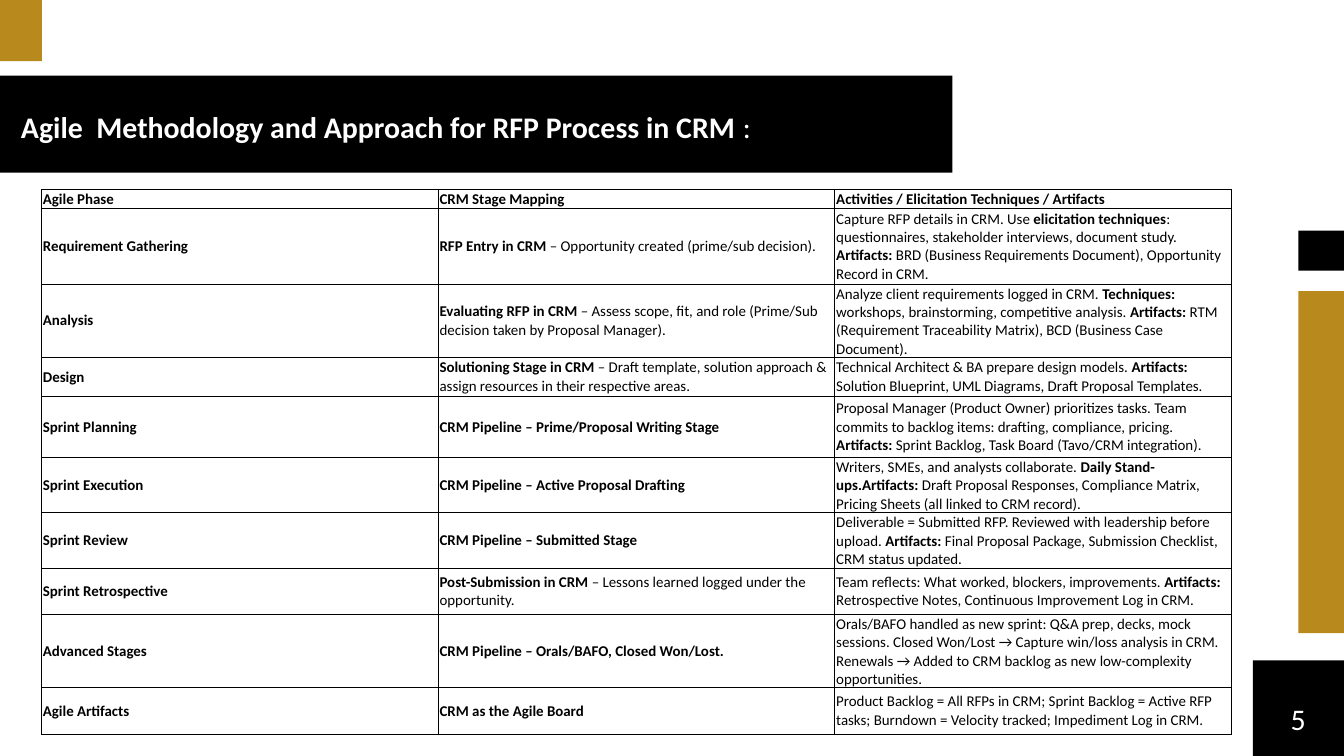
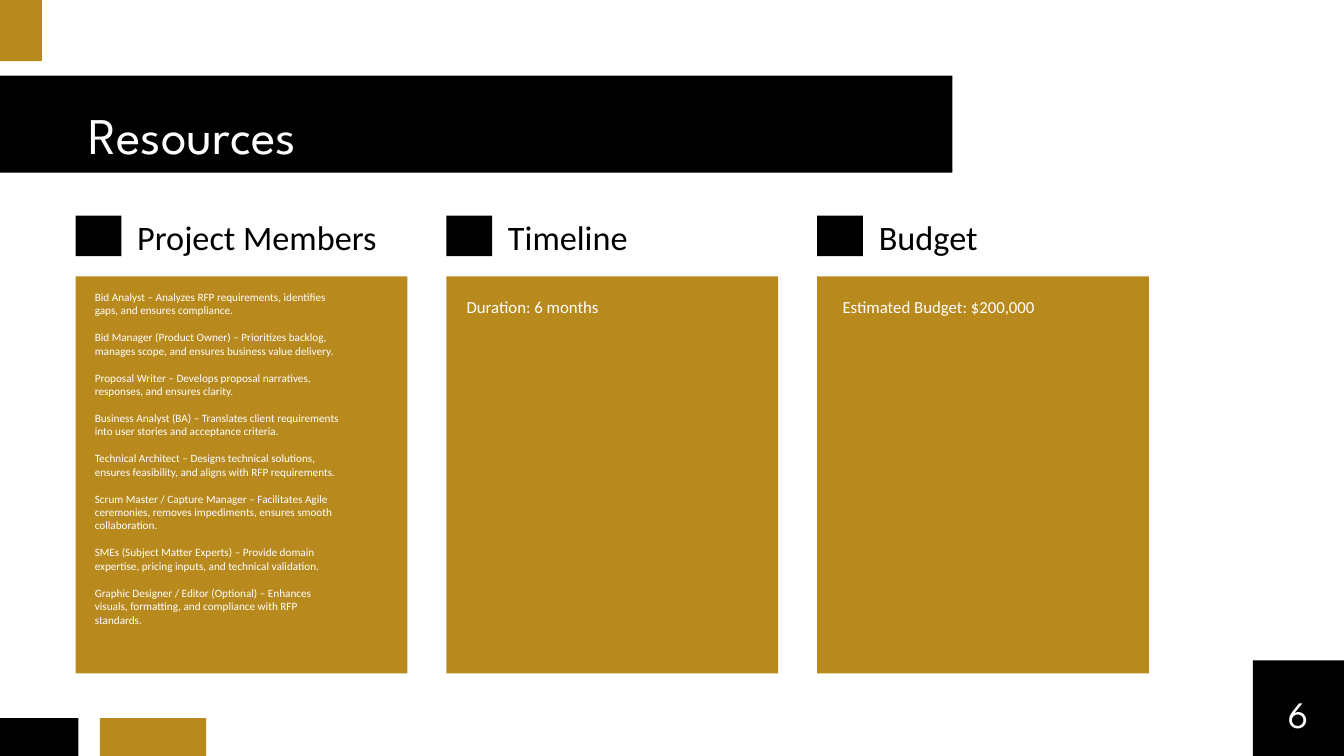
from lxml import etree
from pptx import Presentation
from pptx.dml.color import RGBColor
from pptx.enum.shapes import MSO_SHAPE
from pptx.enum.text import MSO_ANCHOR, PP_ALIGN
from pptx.oxml import parse_xml
from pptx.oxml.ns import nsdecls
from pptx.util import Pt

BLACK = RGBColor(0x00, 0x00, 0x00)
GOLD = RGBColor(0xB8, 0x8A, 0x1E)
WHITE = RGBColor(0xFF, 0xFF, 0xFF)
BODY_FONT = "Calibri"
DISPLAY_FONT = "League Spartan"


def add_block(slide, left, top, width, height, color):
    shape = slide.shapes.add_shape(
        MSO_SHAPE.RECTANGLE, Pt(left), Pt(top), Pt(width), Pt(height))
    shape.shadow.inherit = False
    shape.fill.solid()
    shape.fill.fore_color.rgb = color
    shape.line.fill.background()


def write_text(container, text, box=None, size=16, color=BLACK, font=BODY_FONT,
               align=None, line_spacing=None, space_after=None, inset=(0, 0)):
    """Write into a table cell, or into a new text box when a slide and box are given.

    Each line becomes a paragraph; parts between ** marks are bold.
    """
    if box:
        frame = container.shapes.add_textbox(*map(Pt, box)).text_frame
        frame.word_wrap = True
        frame.margin_left = frame.margin_right = Pt(inset[0])
        frame.margin_top = frame.margin_bottom = Pt(inset[1])
    else:
        frame = container.text_frame
    for index, line in enumerate(text.split("\n")):
        paragraph = frame.add_paragraph() if index else frame.paragraphs[0]
        paragraph.alignment = align
        if line_spacing:
            paragraph.line_spacing = Pt(line_spacing)
        if space_after:
            paragraph.space_after = Pt(space_after)
        for position, part in enumerate(line.split("**")):
            if part:
                run = paragraph.add_run()
                run.text = part
                run.font.size = Pt(size)
                run.font.name = font
                run.font.bold = position % 2 == 1
                run.font.color.rgb = color


presentation = Presentation()
presentation.slide_width = Pt(1440)
presentation.slide_height = Pt(810)

# Shared frame: corner accent, title band, page number
PAGES = [
    dict(title=dict(text="**Agile  Methodology and Approach for RFP Process in CRM **:",
                    box=(22.5, 101.5, 1069, 49), size=32, line_spacing=53.2),
         number=dict(text="5", size=32)),
    dict(title=dict(text="Resources", box=(94.5, 100, 433.5, 73), size=55,
                    font=DISPLAY_FONT, line_spacing=77),
         number=dict(text="6", size=40, font=DISPLAY_FONT)),
]
slides = []
for page in PAGES:
    slide = presentation.slides.add_slide(presentation.slide_layouts[6])
    add_block(slide, 0, 0, 45, 65.5, GOLD)
    add_block(slide, 0, 81, 1020.5, 104, BLACK)
    add_block(slide, 1342.5, 707.5, 97.5, 102.5, BLACK)
    write_text(slide, color=WHITE, **page["title"])
    write_text(slide, box=(1349.5, 733, 83, 52), color=WHITE,
               align=PP_ALIGN.CENTER, line_spacing=56, **page["number"])
    slides.append(slide)
agile_slide, resources_slide = slides

# Agile phases table
add_block(agile_slide, 1391, 247, 49, 43, BLACK)
add_block(agile_slide, 1391, 312, 49, 366.5, GOLD)

PHASES = [
    (20, "**Agile Phase**", "**CRM Stage Mapping**",
     "**Activities / Elicitation Techniques / Artifacts**"),
    (81, "**Requirement Gathering**",
     "**RFP Entry in CRM** – Opportunity created (prime/sub decision).",
     "Capture RFP details in CRM. Use **elicitation techniques**: questionnaires, "
     "stakeholder interviews, document study. **Artifacts:** BRD (Business "
     "Requirements Document), Opportunity Record in CRM."),
    (73, "**Analysis**",
     "**Evaluating RFP in CRM** – Assess scope, fit, and role (Prime/Sub decision "
     "taken by Proposal Manager).",
     "Analyze client requirements logged in CRM. **Techniques:** workshops, "
     "brainstorming, competitive analysis. **Artifacts:** RTM (Requirement "
     "Traceability Matrix), BCD (Business Case Document)."),
    (42, "**Design**",
     "**Solutioning Stage in CRM** – Draft template, solution approach & assign "
     "resources in their respective areas.",
     "Technical Architect & BA prepare design models. **Artifacts:** Solution "
     "Blueprint, UML Diagrams, Draft Proposal Templates."),
    (65.5, "**Sprint Planning**", "**CRM Pipeline – Prime/Proposal Writing Stage**",
     "Proposal Manager (Product Owner) prioritizes tasks. Team commits to backlog "
     "items: drafting, compliance, pricing. **Artifacts:** Sprint Backlog, Task "
     "Board (Tavo/CRM integration)."),
    (58, "**Sprint Execution**", "**CRM Pipeline – Active Proposal Drafting**",
     "Writers, SMEs, and analysts collaborate. **Daily Stand-ups.Artifacts:** Draft "
     "Proposal Responses, Compliance Matrix, Pricing Sheets (all linked to CRM "
     "record)."),
    (58, "**Sprint Review**", "**CRM Pipeline – Submitted Stage**",
     "Deliverable = Submitted RFP. Reviewed with leadership before upload. "
     "**Artifacts:** Final Proposal Package, Submission Checklist, CRM status "
     "updated."),
    (50, "**Sprint Retrospective**",
     "**Post-Submission in CRM** – Lessons learned logged under the opportunity.",
     "Team reflects: What worked, blockers, improvements. **Artifacts:** "
     "Retrospective Notes, Continuous Improvement Log in CRM."),
    (73, "**Advanced Stages**", "**CRM Pipeline – Orals/BAFO, Closed Won/Lost.**",
     "Orals/BAFO handled as new sprint: Q&A prep, decks, mock sessions. Closed "
     "Won/Lost → Capture win/loss analysis in CRM. Renewals → Added to CRM backlog "
     "as new low-complexity opportunities."),
    (50, "**Agile Artifacts**", "**CRM as the Agile Board**",
     "Product Backlog = All RFPs in CRM; Sprint Backlog = Active RFP tasks; "
     "Burndown = Velocity tracked; Impediment Log in CRM."),
]
COLUMN_WIDTH = 425
table_height = sum(height for height, *_ in PHASES)
table = agile_slide.shapes.add_table(
    len(PHASES), 3, Pt(44.5), Pt(203), Pt(3 * COLUMN_WIDTH), Pt(table_height)).table
table.first_row = table.horz_banding = False
for column in table.columns:
    column.width = Pt(COLUMN_WIDTH)
for row, (height, *texts) in zip(table.rows, PHASES):
    row.height = Pt(height)
    for cell, text in zip(row.cells, texts):
        write_text(cell, text)
        cell.vertical_anchor = MSO_ANCHOR.MIDDLE
        cell.margin_left = cell.margin_right = Pt(1.5)
        cell.margin_top = cell.margin_bottom = Pt(0.75)
        properties = cell._tc.get_or_add_tcPr()
        for side in ("lnL", "lnR", "lnT", "lnB"):
            border = parse_xml(f'<a:{side} {nsdecls("a")} w="{Pt(1)}"/>')
            fill = etree.SubElement(border, border.tag.replace(side, "solidFill"))
            etree.SubElement(fill, border.tag.replace(side, "srgbClr"), val=str(BLACK))
            properties.append(border)
        cell.fill.background()

# Resource cards
add_block(resources_slide, 0, 769.5, 84, 40.5, BLACK)
add_block(resources_slide, 107, 769.5, 114, 40.5, GOLD)

MEMBERS = "\n".join([
    "Bid Analyst – Analyzes RFP requirements, identifies gaps, and ensures compliance.",
    "Bid Manager (Product Owner) – Prioritizes backlog, manages scope, and ensures "
    "business value delivery.",
    "Proposal Writer – Develops proposal narratives, responses, and ensures clarity.",
    "Business Analyst (BA) – Translates client requirements into user stories and "
    "acceptance criteria.",
    "Technical Architect – Designs technical solutions, ensures feasibility, and "
    "aligns with RFP requirements.",
    "Scrum Master / Capture Manager – Facilitates Agile ceremonies, removes "
    "impediments, ensures smooth collaboration.",
    "SMEs (Subject Matter Experts) – Provide domain expertise, pricing inputs, and "
    "technical validation.",
    "Graphic Designer / Editor (Optional) – Enhances visuals, formatting, and "
    "compliance with RFP standards.",
])
# heading, body, body box (offset from card, top, width, height), body format
CARDS = [
    ("Project Members", MEMBERS, (13.5, 307.5, 276.5, 371),
     dict(size=12, space_after=14.4)),
    ("Timeline", "Duration: 6 months", (11.5 + 3, 314.5, 287.5, 29), dict(size=18)),
    ("Budget", "Estimated Budget: $200,000", (20, 314.5, 320, 29), dict(size=18)),
]
CARD_LEFT, CARD_STEP = 81, 397.3
for index, (heading, body, body_box, body_format) in enumerate(CARDS):
    left = CARD_LEFT + index * CARD_STEP
    offset, *rest = body_box
    add_block(resources_slide, left, 231, 49, 43.5, BLACK)
    add_block(resources_slide, left, 296, 355.5, 425.5, GOLD)
    write_text(resources_slide, heading, box=(left + 66, 224.5, 271, 50),
               size=36.7, line_spacing=51.3)
    write_text(resources_slide, body, box=(left + offset, *rest), color=WHITE,
               inset=(7.2, 3.6), **body_format)

presentation.save("out.pptx")
